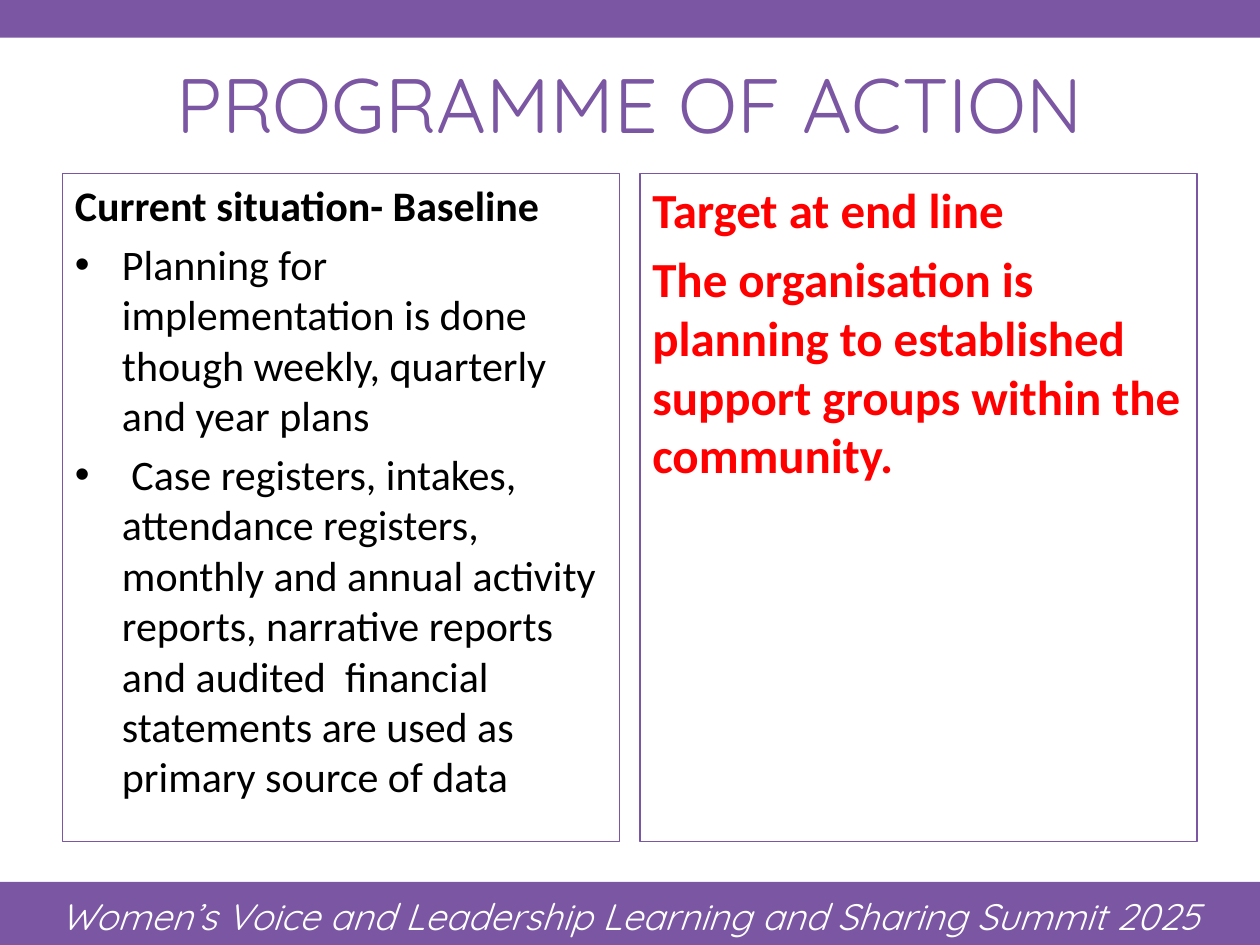
from lxml.etree import SubElement
from pptx import Presentation
from pptx.dml.color import RGBColor
from pptx.enum.shapes import MSO_SHAPE
from pptx.enum.text import MSO_ANCHOR, PP_ALIGN
from pptx.oxml.ns import qn
from pptx.util import Cm, Pt

PURPLE = RGBColor(0x7B, 0x56, 0xA3)
RED = RGBColor(0xFF, 0, 0)
BLACK = RGBColor(0, 0, 0)
WHITE = RGBColor(0xFF, 0xFF, 0xFF)
WIDE, HIGH = 25.4, 19.05


def write(frame, text, size, color, font="Calibri", bold=False, italic=False,
          align=PP_ALIGN.LEFT, bullet=False, line=None):
    """Add one paragraph, using the empty first one if it is free."""
    first = not frame.text
    para = frame.paragraphs[0] if first else frame.add_paragraph()
    para.alignment = align
    if line:
        para.line_spacing = line
    if not first:
        para.space_before = Pt(size * 0.2)
    if bullet:
        props = para._p.get_or_add_pPr()
        props.set("marL", str(Cm(0.95)))
        props.set("indent", str(-Cm(0.95)))
        SubElement(props, qn("a:buFont"), typeface="Arial")
        SubElement(props, qn("a:buChar"), char="•")
    run = para.add_run()
    run.text = text
    run.font.name = font
    run.font.size = Pt(size)
    run.font.bold = bold
    run.font.italic = italic
    run.font.color.rgb = color


class Deck:
    """Holds the house style and the current slide."""
    main = PURPLE
    head = "Quicksand"

    def __init__(self):
        self.file = Presentation()
        self.file.slide_width, self.file.slide_height = Cm(WIDE), Cm(HIGH)
        self.slide = self.file.slides.add_slide(self.file.slide_layouts[6])

    def rect(self, *place):
        shape = self.slide.shapes.add_shape(
            MSO_SHAPE.RECTANGLE, *map(Cm, place))
        shape.shadow.inherit = False
        return shape

    def bar(self, top, height):
        shape = self.rect(0, top, WIDE, height)
        shape.fill.solid()
        shape.fill.fore_color.rgb = self.main
        shape.line.fill.background()

    def label(self, text, place, **style):
        box = self.slide.shapes.add_textbox(*map(Cm, place))
        frame = box.text_frame
        frame.word_wrap = True
        frame.vertical_anchor = MSO_ANCHOR.MIDDLE
        write(frame, text, font=self.head, align=PP_ALIGN.CENTER, **style)

    def panel(self, left, items, **style):
        shape = self.rect(left, 3.5, 11.23, 13.46)
        shape.fill.background()
        shape.line.color.rgb = self.main
        shape.line.width = Pt(0.75)
        frame = shape.text_frame
        frame.word_wrap = True
        frame.vertical_anchor = MSO_ANCHOR.TOP
        for text, extra in items:
            write(frame, text, **style, **extra)


def main():
    deck = Deck()

    # Top and bottom bars
    deck.bar(0, 0.76)
    deck.bar(17.78, 1.27)
    deck.label("Women’s Voice and Leadership Learning and Sharing Summit 2025",
               (0.43, 17.83, 24.54, 1.22), size=21, color=WHITE,
               italic=True, line=1.07)

    # Title
    deck.label("PROGRAMME OF ACTION", (0, 0.91, WIDE, 2.34),
               size=44, color=PURPLE)

    # Baseline and target panels
    bold, point = {"bold": True}, {"bullet": True}
    deck.panel(1.26, [
        ("Current situation- Baseline", bold),
        ("Planning for implementation is done though weekly, quarterly "
         "and year plans", point),
        (" Case registers, intakes, attendance registers, monthly and annual "
         "activity reports, narrative reports and audited  financial "
         "statements are used as primary source of data", point),
    ], size=24, color=BLACK)
    deck.panel(12.9, [
        ("Target at end line", bold),
        ("The organisation is planning to established support groups "
         "within the community.", bold),
    ], size=28, color=RED)

    deck.file.save("out.pptx")


if __name__ == "__main__":
    main()
